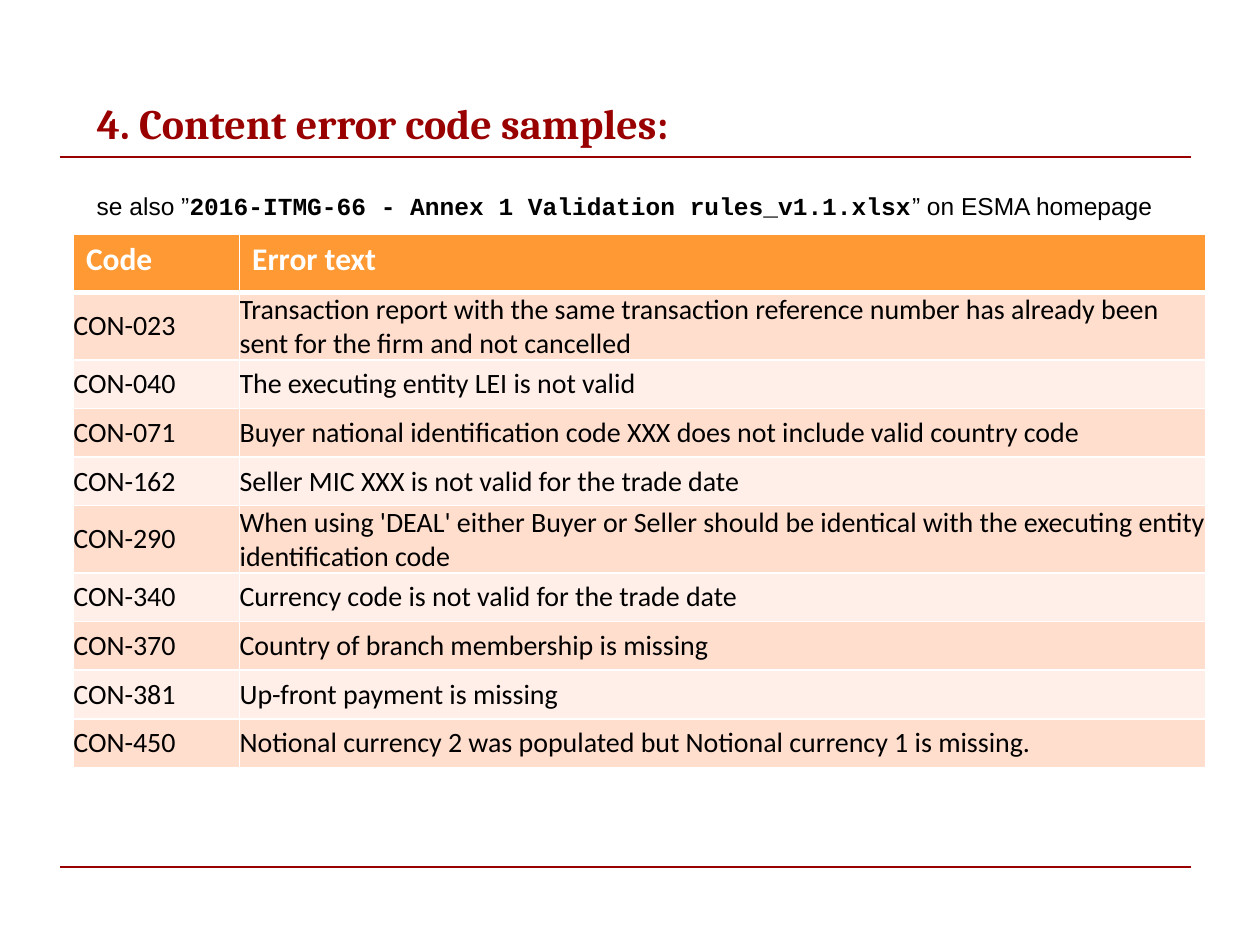
from dataclasses import dataclass

from lxml import etree
from pptx import Presentation
from pptx.dml.color import RGBColor
from pptx.enum.shapes import MSO_CONNECTOR
from pptx.enum.text import MSO_ANCHOR, PP_ALIGN
from pptx.oxml.ns import qn
from pptx.util import Cm, Pt

STRAIGHT = MSO_CONNECTOR.STRAIGHT
TOP, MIDDLE = MSO_ANCHOR.TOP, MSO_ANCHOR.MIDDLE
LEFT = PP_ALIGN.LEFT
TITLE_ONLY = 5


@dataclass(frozen=True)
class Theme:
    """Colours, fonts and type sizes of the slide."""
    accent: str = "990000"
    header: str = "FF9933"
    bands: tuple = ("FFDECE", "FFEFE8")
    ink: str = "000000"
    paper: str = "FFFFFF"
    title_font: str = "Cambria"
    note_font: str = "Arial"
    file_font: str = "Courier New"
    table_font: str = "Calibri"
    title_size: int = 24
    note_size: int = 14
    header_size: int = 18
    body_size: int = 16


THEME = Theme()

ERRORS = [
    ("CON-023", "Transaction report with the same transaction reference number "
                "has already been sent for the firm and not cancelled"),
    ("CON-040", "The executing entity LEI is not valid"),
    ("CON-071", "Buyer national identification code XXX does not include valid country code"),
    ("CON-162", "Seller MIC XXX is not valid for the trade date"),
    ("CON-290", "When using 'DEAL' either Buyer or Seller should be identical "
                "with the executing entity identification code"),
    ("CON-340", "Currency code is not valid for the trade date"),
    ("CON-370", "Country of branch membership is missing"),
    ("CON-381", "Up-front payment is missing"),
    ("CON-450", "Notional currency 2 was populated but Notional currency 1 is missing."),
]
TWO_LINE_CODES = {"CON-023", "CON-290"}


def style(run, name, size, color, bold=False):
    """Format one run of text."""
    run.font.name, run.font.size, run.font.bold = name, Pt(size), bold
    run.font.color.rgb = RGBColor.from_string(color)


def add_rule(slide, left, top, width):
    """Draw a thin horizontal rule across the slide."""
    rule = slide.shapes.add_connector(STRAIGHT, Cm(left), Cm(top), Cm(left + width), Cm(top))
    rule.line.color.rgb = RGBColor.from_string(THEME.accent)
    rule.line.width = Pt(1.25)
    etree.SubElement(rule._element.spPr, qn("a:effectLst"))


def add_title(slide, left, top, width, height):
    """Place and format the slide title."""
    title = slide.shapes.title
    title.left, title.top, title.width, title.height = map(Cm, (left, top, width, height))
    title.text_frame.text = "4. Content error code samples:"
    title.text_frame.vertical_anchor = MIDDLE
    heading = title.text_frame.paragraphs[0]
    heading.alignment = LEFT
    style(heading.runs[0], THEME.title_font, THEME.title_size, THEME.accent, True)


def add_source_note(slide, left, top, width, height):
    """Write the note that names the validation rules file."""
    note = slide.shapes.add_textbox(*map(Cm, (left, top, width, height))).text_frame
    note.word_wrap = True
    pieces = [
        ("se also ”", THEME.note_font, False),
        ("2016-ITMG-66 - Annex 1 Validation rules_v1.1.xlsx", THEME.file_font, True),
        ("” on ESMA homepage", THEME.note_font, False),
    ]
    for words, font, bold in pieces:
        run = note.paragraphs[0].add_run()
        run.text = words
        style(run, font, THEME.note_size, THEME.ink, bold)


def set_borders(cell, bottom=1):
    """Give a cell white borders, with a chosen bottom width in points."""
    properties = cell._tc.get_or_add_tcPr()
    for side, points in (("L", 1), ("R", 1), ("T", 1), ("B", bottom)):
        line = etree.SubElement(properties, qn(f"a:ln{side}"), w=str(int(Pt(points))))
        fill = etree.SubElement(line, qn("a:solidFill"))
        etree.SubElement(fill, qn("a:srgbClr"), val=THEME.paper)


def fill_cell(cell, words, fill, size, color, is_header):
    """Write and format one table cell."""
    set_borders(cell, 3 if is_header else 1)
    cell.fill.solid()
    cell.fill.fore_color.rgb = RGBColor.from_string(fill)
    cell.text_frame.text = words
    cell.vertical_anchor = TOP if is_header else MIDDLE
    if not is_header:
        cell.margin_left = cell.margin_right = cell.margin_top = cell.margin_bottom = 0
    style(cell.text_frame.paragraphs[0].runs[0], THEME.table_font, size, color, is_header)


def add_error_table(slide, left, top, width, height):
    """Build the banded table of error codes and texts."""
    rows = [("Code", "Error text"), *ERRORS]
    table = slide.shapes.add_table(len(rows), 2, *map(Cm, (left, top, width, height))).table
    table.horz_banding = False
    code_width, header_height, tall, short = 3.35, 1.17, 1.3, 0.98
    table.columns[0].width = Cm(code_width)
    table.columns[1].width = Cm(width - code_width)
    for index, entry in enumerate(rows):
        is_header = index == 0
        if is_header:
            row_height, look = header_height, (THEME.header, THEME.header_size, THEME.paper)
        else:
            row_height = tall if entry[0] in TWO_LINE_CODES else short
            look = (THEME.bands[(index - 1) % 2], THEME.body_size, THEME.ink)
        table.rows[index].height = Cm(row_height)
        for column, words in enumerate(entry):
            fill_cell(table.cell(index, column), words, *look, is_header)


def main():
    """Build the slide and save it."""
    deck = Presentation()
    deck.slide_width, deck.slide_height = Cm(25.4), Cm(19.05)
    slide = deck.slides.add_slide(deck.slide_layouts[TITLE_ONLY])
    for rule_top in (3.17, 17.47):
        add_rule(slide, 1.2, rule_top, 22.8)
    add_title(slide, 1.7, 1.52, 22.02, 1.9)
    add_source_note(slide, 1.7, 3.73, 22.99, 1.6)
    add_error_table(slide, 1.48, 4.73, 22.83, 10.63)
    deck.save("out.pptx")


if __name__ == "__main__":
    main()
